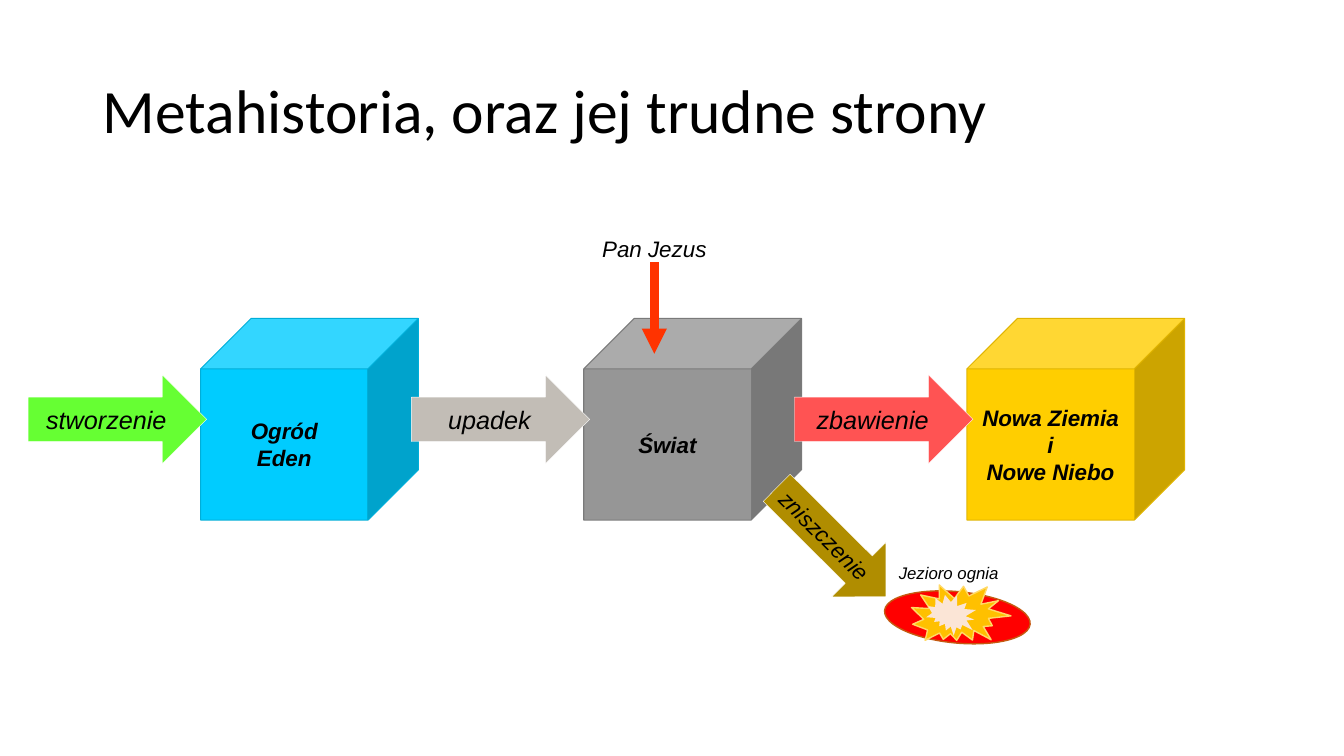
from lxml import etree
from pptx import Presentation
from pptx.dml.color import RGBColor
from pptx.enum.shapes import MSO_CONNECTOR, MSO_SHAPE
from pptx.enum.text import MSO_ANCHOR, MSO_AUTO_SIZE, PP_ALIGN
from pptx.oxml.ns import qn
from pptx.util import Inches, Pt

TITLE = "Metahistoria, oraz jej trudne strony"
# text, fill, outline
STAGES = [
    ("Ogród\vEden", "00CCFF", "00AED8"),
    ("Świat", "969696", "7A7A7A"),
    ("Nowa Ziemia\ni\nNowe Niebo", "FFCE00", "E0B400"),
]
# text, fill
TRANSITIONS = [
    ("stworzenie", "66FF33"),
    ("upadek", "C2BDB6"),
    ("zbawienie", "FF5353"),
]
DESTRUCTION = ("zniszczenie", "B08D00")
# text, left, top, width, height, size
LABELS = [
    ("Jezioro ognia", 8.69, 5.55, 1.44, 0.26, 12),
    ("Pan Jezus", 5.77, 2.3, 1.44, 0.33, 16),
]
# preset, box, rotation, fill, outline
LAKE_OF_FIRE = [
    (MSO_SHAPE.FLOWCHART_CONNECTOR, (8.77, 5.87, 1.45, 0.51), 5.4, "FF0000", "C55A11"),
    (MSO_SHAPE.EXPLOSION2, (9.04, 5.76, 0.97, 0.68), 16.2, "FFC000", "FFD966"),
    (MSO_SHAPE.EXPLOSION2, (9.21, 5.88, 0.47, 0.45), 56.2, "FBE5D6", None),
]
STAGE_LEFT, TRANSITION_LEFT, STEP = 1.99, 0.28, 3.8


def color(code):
    return RGBColor.from_string(code)


def add_preset(shapes, preset, box, fill, outline, line_width, rotation=0):
    shape = shapes.add_shape(preset, *map(Inches, box))
    shape.rotation = rotation
    shape.shadow.inherit = False
    shape.fill.solid()
    shape.fill.fore_color.rgb = color(fill)
    if outline:
        shape.line.color.rgb = color(outline)
        shape.line.width = Pt(line_width)
    else:
        shape.line.fill.background()
    return shape


def write(shape, text, size, bold=False, wrap=False):
    """Fill a shape with centred italic text."""
    frame = shape.text_frame
    frame.text = text
    frame.word_wrap = wrap
    frame.vertical_anchor = MSO_ANCHOR.MIDDLE
    for paragraph in frame.paragraphs:
        paragraph.alignment = PP_ALIGN.CENTER
        for run in paragraph.runs:
            font = run.font
            font.name, font.size = "Arial", Pt(size)
            font.bold, font.italic = bold, True
            font.color.rgb = color("000000")


def add_title(slide):
    title = slide.shapes.title
    title.left, title.top, title.width, title.height = map(Inches, (0.92, 0.4, 11.5, 1.45))
    title.text_frame.text = TITLE
    title.text_frame.vertical_anchor = MSO_ANCHOR.MIDDLE
    paragraph = title.text_frame.paragraphs[0]
    paragraph.alignment = PP_ALIGN.LEFT
    paragraph.line_spacing = 0.9
    font = paragraph.runs[0].font
    font.name, font.size = "Calibri", Pt(44)
    font.color.rgb = color("000000")


def add_label(shapes, text, left, top, width, height, size):
    label = shapes.add_textbox(*map(Inches, (left, top, width, height)))
    frame = label.text_frame
    frame.auto_size = MSO_AUTO_SIZE.SHAPE_TO_FIT_TEXT
    frame.margin_left = frame.margin_right = Inches(0.03)
    frame.margin_top = frame.margin_bottom = Inches(0.03)
    write(label, text, size, wrap=True)


def add_descent(shapes):
    """Draw the red arrow from Pan Jezus into the world."""
    descent = shapes.add_connector(
        MSO_CONNECTOR.STRAIGHT, *map(Inches, (6.49, 2.6, 6.49, 3.51)))
    descent.line.color.rgb = color("FF3300")
    descent.line.width = Pt(6)
    properties = descent._element.spPr
    etree.SubElement(properties.find(qn("a:ln")), qn("a:tailEnd"), type="triangle")
    etree.SubElement(properties, qn("a:effectLst"))


def main():
    presentation = Presentation()
    presentation.slide_width, presentation.slide_height = Inches(13.33), Inches(7.5)
    slide = presentation.slides.add_slide(presentation.slide_layouts[5])
    shapes = slide.shapes
    add_title(slide)

    for i, (text, fill, outline) in enumerate(STAGES):
        box = (STAGE_LEFT + i * STEP, 3.16, 2.16, 2)
        stage = add_preset(shapes, MSO_SHAPE.CUBE, box, fill, outline, 0.75)
        write(stage, text, 16, bold=True)

    for i, (text, fill) in enumerate(TRANSITIONS):
        box = (TRANSITION_LEFT + i * STEP, 3.72, 1.77, 0.88)
        transition = add_preset(shapes, MSO_SHAPE.RIGHT_ARROW, box, fill, "FFFFFF", 0.25)
        write(transition, text, 18)

    text, fill = DESTRUCTION
    destruction = add_preset(
        shapes, MSO_SHAPE.RIGHT_ARROW, (7.48, 5, 1.53, 0.76), fill, "FFFFFF", 0.25, 44.9)
    write(destruction, text, 16)

    add_descent(shapes)
    for label in LABELS:
        add_label(shapes, *label)

    lake = shapes.add_group_shape()
    for preset, box, rotation, fill, outline in LAKE_OF_FIRE:
        add_preset(lake.shapes, preset, box, fill, outline, 1, rotation)

    presentation.save("out.pptx")


if __name__ == "__main__":
    main()
